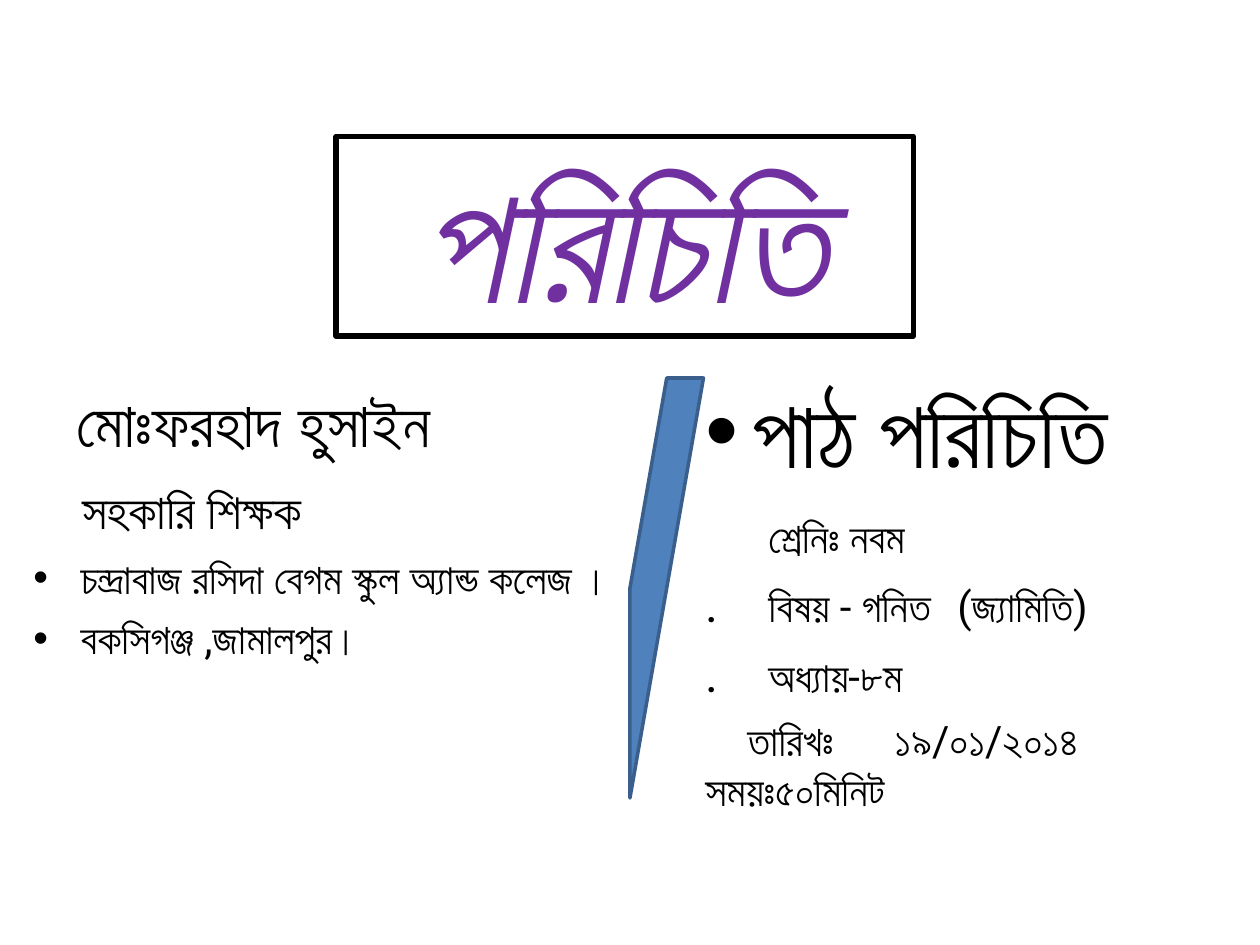
from dataclasses import dataclass

import pptx
import pptx.dml.color
import pptx.enum.shapes
import pptx.enum.text
import pptx.oxml
import pptx.oxml.ns
import pptx.util

Pt = pptx.util.Pt
Shape = pptx.enum.shapes.MSO_SHAPE
Align = pptx.enum.text.PP_ALIGN
Anchor = pptx.enum.text.MSO_ANCHOR


@dataclass(frozen=True)
class Theme:
    font: str = "Roboto"
    text: str = "000000"
    title: str = "7030A0"
    stripe: str = "4F81BD"
    stripe_line: str = "3A5F8C"
    title_size: int = 96
    heading_size: int = 54
    name_size: int = 36
    role_size: int = 28
    dot_size: int = 28
    body_size: int = 24
    role_gap_size: int = 40


def rgb(value):
    return pptx.dml.color.RGBColor.from_string(value)


class SlideBuilder:
    def __init__(self, prs, theme):
        self.theme = theme
        self.s = prs.slides.add_slide(prs.slide_layouts[6])

    def shape(self, kind, box, line, width, fill=None):
        sp = self.s.shapes.add_shape(kind, *map(Pt, box))
        sp.shadow.inherit = False
        if fill:
            sp.fill.solid()
            sp.fill.fore_color.rgb = rgb(fill)
        else:
            sp.fill.background()
        sp.line.color.rgb = rgb(line)
        sp.line.width = Pt(width)
        return sp

    def text_box(self, box):
        tf = self.s.shapes.add_textbox(*map(Pt, box)).text_frame
        tf.word_wrap = True
        return tf

    def paragraph(self, tf, runs, before=0, margin=0, indent=0, bullet=None, tabs=()):
        """Add a paragraph; each run is (text, size) or (text, size, font settings)."""
        p = tf.paragraphs[0]
        if p.runs:
            p = tf.add_paragraph()
        p.space_before = Pt(before)
        pPr = p._p.get_or_add_pPr()
        pPr.set("marL", str(Pt(margin)))
        pPr.set("indent", str(Pt(indent)))
        if bullet:
            self.child(pPr, "a:buFont", typeface="Arial")
            self.child(pPr, "a:buChar", char=bullet)
        if tabs:
            tab_list = self.child(pPr, "a:tabLst")
            for stop in tabs:
                self.child(tab_list, "a:tab", pos=str(Pt(stop)), algn="l")
        for text, size, *extra in runs:
            self.run(p, text, size, **(extra[0] if extra else {}))
        return p

    def run(self, p, text, size, color=None, bold=None, italic=None):
        r = p.add_run()
        r.text = text
        r.font.name = self.theme.font
        r.font.size = Pt(size)
        r.font.bold = bold
        r.font.italic = italic
        r.font.color.rgb = rgb(color or self.theme.text)

    @staticmethod
    def child(parent, tag, **attributes):
        element = parent.makeelement(pptx.oxml.ns.qn(tag), attributes)
        parent.append(element)
        return element


def main():
    prs = pptx.Presentation()
    prs.slide_width, prs.slide_height = Pt(720), Pt(540)
    t = Theme()
    b = SlideBuilder(prs, t)
    bulleted = {"margin": 27, "indent": -27, "bullet": "•"}

    title = b.shape(Shape.RECTANGLE, (192, 78, 330, 114), t.text, 3)
    tf = title.text_frame
    tf.word_wrap = True
    tf.vertical_anchor = Anchor.MIDDLE
    p = b.paragraph(tf, [("পরিচিতি", t.title_size, {"color": t.title, "italic": True})])
    p.alignment = Align.CENTER

    school = b.text_box((12, 312, 354, 366))
    b.paragraph(school, [("চন্দ্রাবাজ রসিদা বেগম স্কুল অ্যান্ড কলেজ ।", t.body_size)], **bulleted)
    b.paragraph(school, [("বকসিগঞ্জ ,জামালপুর।", t.body_size)], before=5.6, **bulleted)

    lesson = b.text_box((396, 210, 324, 246))
    b.paragraph(lesson, [("পাঠ পরিচিতি", t.heading_size)], **bulleted)
    b.paragraph(lesson, [("শ্রেনিঃ নবম", t.body_size)], before=14, indent=36)
    for text in ("বিষয় - গনিত\t(জ্যামিতি)", "অধ্যায়-৮ম"):
        b.paragraph(lesson, [(".", t.dot_size), ("\t" + text, t.body_size)],
                    before=6.6, tabs=(25, 137))
    b.paragraph(lesson, [("তারিখঃ\t১৯/০১/২০১৪\tসময়ঃ৫০মিনিট", t.body_size)],
                before=6.6, indent=24, tabs=(85, 202))

    teacher = b.text_box((30, 216, 324, 114))
    bold = {"bold": True}
    b.paragraph(teacher, [(" ", t.body_size, bold), ("মোঃফরহাদ হুসাইন", t.name_size, bold)])
    b.paragraph(teacher, [(" ", t.role_gap_size), ("সহকারি শিক্ষক", t.role_size)])

    b.shape(Shape.DIAGONAL_STRIPE, (360, 216, 42, 240), t.stripe_line, 2, t.stripe)
    prs.save("out.pptx")


if __name__ == "__main__":
    main()
